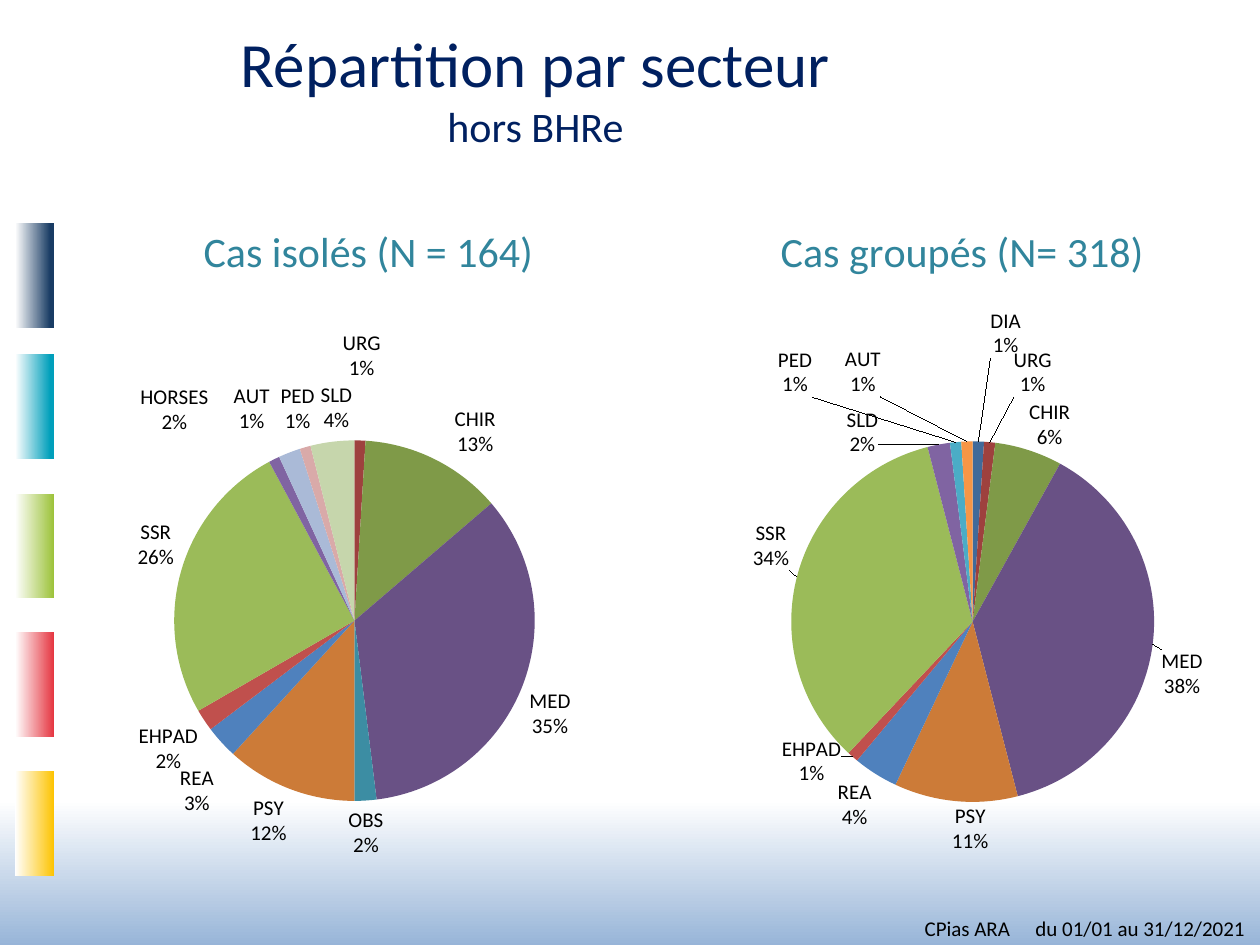
from copy import deepcopy
from math import cos, pi, sin

from lxml.etree import SubElement
from pptx import Presentation
from pptx.chart.data import CategoryChartData as Data
from pptx.dml.color import RGBColor
from pptx.enum.chart import XL_CHART_TYPE as Kind, XL_LABEL_POSITION as Spot
from pptx.enum.shapes import MSO_SHAPE as Shape
from pptx.enum.text import MSO_ANCHOR as Anchor, PP_ALIGN as Align
from pptx.oxml import parse_xml
from pptx.oxml.ns import qn
from pptx.util import Inches, Pt

COLS, ROWS = 100, 75
UNIT = Inches(10) // COLS
FACE = "Calibri"
HUES = ["416A9A", "9E413E", "7F9A48", "695185", "3C8DA3", "CC7B38", "4F81BD", "C0504D",
        "9BBB59", "8064A2", "4BACC6", "F79646", "AABAD7", "D9AAA9", "C6D6AC"]
BARS = [(20.3, "193C64", 0.1), (30.7, "009FBB", 0.1), (41.8, "9CC239", 0),
        (52.8, "E53540", 0), (63.8, "FDC300", 0)]
SOLO = {
    "title": ("Cas isolés (N = 164)", 0.19), "box": (6.7, 16.6, 46.6, 54),
    "plot": (0.15, 0.34, 0.62, 0.53), "lines": "0",
    "cats": "DIA URG CHIR MED OBS PSY REA EHPAD SSR AUT CS EXPINT HORSES PED SLD".split(),
    "vals": [0, 1, 13, 35, 2, 12, 3, 2, 26, 1, 0, 0, 2, 1, 4],
    "hide": ["DIA", "CS", "EXPINT"],
    "spots": {"URG": (28.7, 28.7), "CHIR": (37.7, 34.7), "REA": (15.6, 62.5),
              "AUT": (19.9, 32.8), "HORSES": (14, 32.9), "PED": (23.4, 32.9),
              "SLD": (26.3, 32.8)}}
GROUP = {
    "title": ("Cas groupés (N= 318)", 0.22), "box": (50.8, 16.6, 48, 51.5),
    "plot": (0.25, 0.36, 0.6, 0.56), "lines": "1",
    "cats": "DIA URG CHIR MED OBS PSY REA EHPAD SSR SLD PED AUT EXPINT HORSES".split(),
    "vals": [1, 1, 6, 38, 0, 11, 4, 1, 34, 2, 1, 1, 0, 0],
    "hide": ["OBS", "EXPINT"],
    "spots": {"DIA": (79.8, 27.1), "URG": (82.1, 30.2), "CHIR": (83.3, 34.4),
              "MED": (93.3, 53.7), "PSY": (76.8, 66), "EHPAD": (64.9, 60.3),
              "SSR": (61.5, 43.6), "SLD": (68.1, 35), "PED": (62.8, 30.2),
              "AUT": (68.5, 30.2), "HORSES": (76.4, 24.8)}}


def cells(*sizes):
    """Turn grid cells into lengths."""
    return [int(size * UNIT) for size in sizes]


def hue(code):
    """Return the colour of a hex string."""
    return RGBColor.from_string(code)


def style(font, size, code):
    """Set face, size and colour of a font."""
    font.name, font.size, font.color.rgb = FACE, Pt(size), hue(code)


def fade(slide, box, turn, code, start=0):
    """Draw a turned bar that fades from a colour to white."""
    bar = slide.shapes.add_shape(Shape.RECTANGLE, *cells(*box))
    bar.rotation, bar.shadow.inherit = turn, False
    bar.line.fill.background()
    bar.fill.gradient()
    bar.fill.gradient_angle = 270
    for stop, tone, place in zip(bar.fill.gradient_stops, (code, "FFFFFF"), (start, 1)):
        stop.color.rgb, stop.position = hue(tone), place


def head(slide):
    """Write the title and its smaller second line."""
    frame = slide.shapes.add_textbox(*cells(17.7, 0.7, 49.6, 12.5)).text_frame
    frame.word_wrap, frame.vertical_anchor = True, Anchor.MIDDLE
    para = frame.paragraphs[0]
    para.alignment = Align.CENTER
    for text, size in (("Répartition par secteur", 36), ("hors BHRe", 24)):
        run = para.add_run()
        run.text = text
        style(run.font, size, "002060")
        if size == 36:
            para.add_line_break()


def foot(slide):
    """Write the source and period at the lower right."""
    frame = slide.shapes.add_textbox(*cells(72.4, 72.2, 27.6, 3)).text_frame
    frame.word_wrap = True
    para = frame.paragraphs[0]
    para.text = "CPias ARA\tdu 01/01 au 31/12/2021"
    tabs = SubElement(para._p.get_or_add_pPr(), qn("a:tabLst"))
    SubElement(tabs, qn("a:tab"), pos=str(cells(8.8)[0]), algn="l")
    style(para.font, 12, "000000")


def layout(inner=False, **parts):
    """Build a manual chart layout from shares."""
    node = parse_xml('<c:layout xmlns:c="http://schemas.openxmlformats.org/drawingml/2006/chart"/>')
    hand = SubElement(node, qn("c:manualLayout"))
    if inner:
        SubElement(hand, qn("c:layoutTarget"), val="inner")
    if "edge" in parts:
        for key in ("xMode", "yMode"):
            SubElement(hand, qn("c:" + key), val=parts["edge"])
    for key in "xywh":
        if key in parts:
            SubElement(hand, qn("c:" + key), val=f"{parts[key]:.4f}")
    return node


def shift(pie, index):
    """Find the offset from a label's usual place to its wanted one."""
    left, top, wide, high = pie["box"]
    x, y, w, h = pie["plot"]
    vals, name = pie["vals"], pie["cats"][index]
    turn = 2 * pi * (sum(vals[:index]) + vals[index] / 2) / sum(vals)
    half = max(1.7, 0.45 * len(name)), 2
    mids = left + (x + w / 2) * wide, top + (y + h / 2) * high
    ray = sin(turn), -cos(turn)
    moves = []
    for mid, part, size, goal, span in zip(mids, ray, half, pie["spots"][name], (wide, high)):
        side = 0 if abs(part) < 0.09 else (1 if part > 0 else -1)
        moves.append((goal - mid - part * w * wide / 2 - side * size) / span)
    return moves


def label(plot, pie):
    """Label the slices, hiding some and moving others."""
    plot.has_data_labels = True
    tags = plot.data_labels
    style(tags.font, 12, "000000")
    tags.number_format, tags.number_format_is_linked = '0"%"', False
    tags.position = Spot.OUTSIDE_END
    tags.show_value = tags.show_category_name = True
    tags.show_percentage = False
    root = plot.series[0].data_labels._element
    for old in list(root):
        root.remove(old)
    for node in tags._element:
        if node.tag != qn("c:showLeaderLines"):
            root.append(deepcopy(node))
    SubElement(root, qn("c:separator")).text = "\n"
    shared = list(root)
    SubElement(root, qn("c:showLeaderLines"), val=pie["lines"])
    for index, name in enumerate(pie["cats"]):
        if name not in pie["hide"] and name not in pie["spots"]:
            continue
        tag = SubElement(root, qn("c:dLbl"))
        shared[0].addprevious(tag)
        SubElement(tag, qn("c:idx"), val=str(index))
        if name in pie["hide"]:
            SubElement(tag, qn("c:delete"), val="1")
            continue
        x, y = shift(pie, index)
        tag.append(layout(x=x, y=y))
        for node in shared:
            tag.append(deepcopy(node))


def draw(slide, pie):
    """Add a pie chart with title, colours and labels."""
    data = Data()
    data.categories = pie["cats"]
    data.add_series("Series 1", pie["vals"])
    chart = slide.shapes.add_chart(Kind.PIE, *cells(*pie["box"]), data).chart
    chart.has_legend = False
    style(chart.font, 18, "000000")
    text, start = pie["title"]
    chart.has_title = True
    title = chart.chart_title
    para = title.text_frame.paragraphs[0]
    para.text = text
    style(para.font, 24, "31859C")
    para.font.bold = False
    for old in title._element.findall(qn("c:layout")):
        title._element.remove(old)
    title._element.find(qn("c:tx")).addnext(layout(edge="edge", x=start, y=0.01))
    area = chart._chartSpace.chart.plotArea
    for old in area.findall(qn("c:layout")):
        area.remove(old)
    area.insert(0, layout(True, edge="edge", **dict(zip("xywh", pie["plot"]))))
    plot = chart.plots[0]
    plot.vary_by_categories = True
    for index in range(len(pie["cats"])):
        fill = plot.series[0].points[index].format.fill
        fill.solid()
        fill.fore_color.rgb = hue(HUES[index])
    label(plot, pie)


def main():
    """Build and save the slide."""
    deck = Presentation()
    deck.slide_width, deck.slide_height = cells(COLS, ROWS)
    slide = deck.slides.add_slide(deck.slide_layouts[6])
    fade(slide, (0, 63.5, COLS, 11.8), 180, "95B3D7")
    for top, code, start in BARS:
        fade(slide, (-1.4, top, 8.3, 3.1), 90, code, start)
    head(slide)
    for pie in (SOLO, GROUP):
        draw(slide, pie)
    foot(slide)
    deck.save("out.pptx")


if __name__ == "__main__":
    main()
